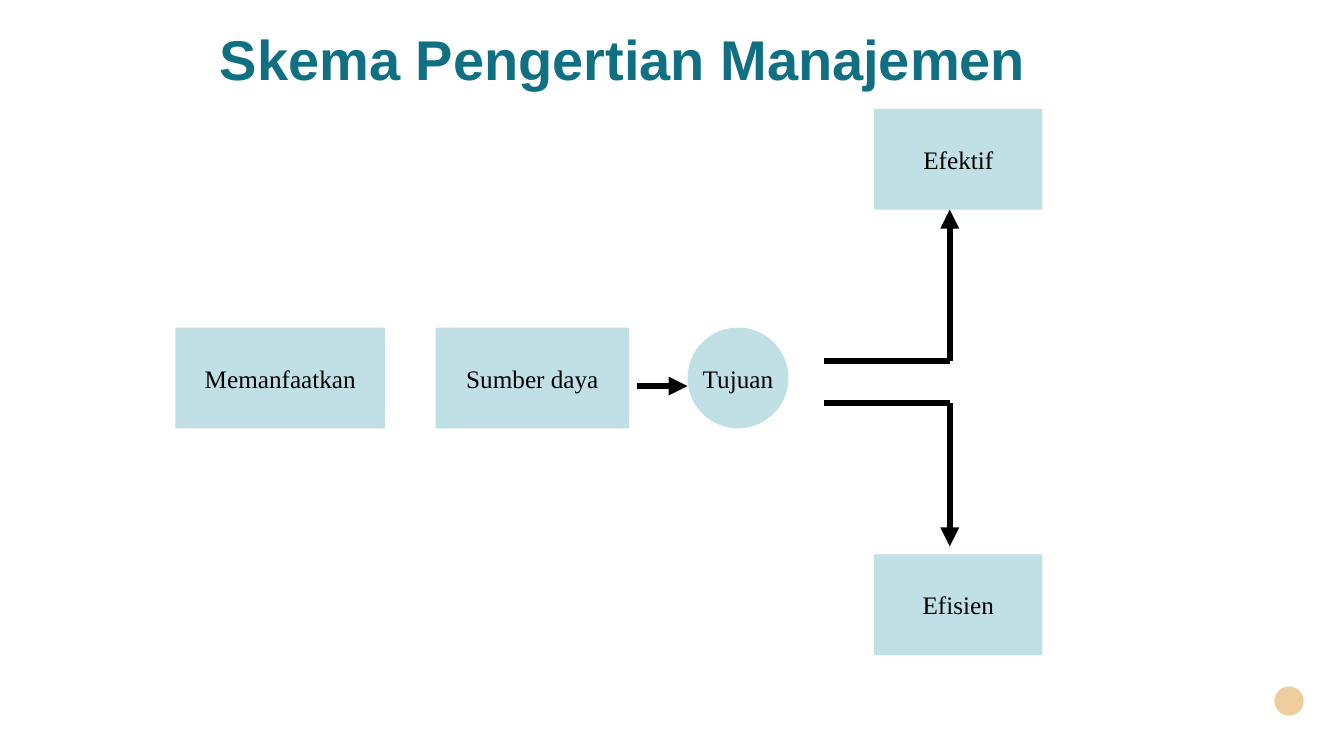
import pptx
import pptx.util
import pptx.dml.color
import pptx.enum.shapes
import pptx.enum.text
import pptx.oxml
import pptx.oxml.ns

Inches = pptx.util.Inches
RECTANGLE = pptx.enum.shapes.MSO_SHAPE.RECTANGLE
OVAL = pptx.enum.shapes.MSO_SHAPE.OVAL


def color(hex_string):
    return pptx.dml.color.RGBColor.from_string(hex_string)


def add_filled_shape(kind, left, top, width, height, fill):
    shape = slide.shapes.add_shape(
        kind, Inches(left), Inches(top), Inches(width), Inches(height))
    shape.shadow.inherit = False
    shape.fill.solid()
    shape.fill.fore_color.rgb = color(fill)
    shape.line.fill.background()
    return shape


presentation = pptx.Presentation()
presentation.slide_width = Inches(13.33)
presentation.slide_height = Inches(7.5)
slide = presentation.slides.add_slide(presentation.slide_layouts[5])

# Title
title = slide.shapes.title
title.left, title.top = Inches(2.08), Inches(0.27)
title.width, title.height = Inches(9.93), Inches(0.75)
title_frame = title.text_frame
title_frame.text = "Skema Pengertian Manajemen"
title_frame.auto_size = pptx.enum.text.MSO_AUTO_SIZE.NONE
title_frame.vertical_anchor = pptx.enum.text.MSO_ANCHOR.TOP
paragraph = title_frame.paragraphs[0]
paragraph.alignment = pptx.enum.text.PP_ALIGN.LEFT
paragraph.line_spacing = 0.9
paragraph.font.name = "Arial"
paragraph.font.size = pptx.util.Pt(40)
paragraph.font.bold = True
paragraph.font.color.rgb = color("107082")

# Corner dot
add_filled_shape(OVAL, 12.64, 6.81, 0.29, 0.29, "F0CDA1")

# Scheme nodes, all one inch high
nodes = [
    ("Memanfaatkan", RECTANGLE, 1.74, 3.25, 2.08),
    ("Sumber daya", RECTANGLE, 4.32, 3.25, 1.92),
    ("Efektif", RECTANGLE, 8.67, 1.08, 1.67),
    ("Efisien", RECTANGLE, 8.67, 5.5, 1.67),
    ("Tujuan", OVAL, 6.82, 3.25, 1),
]
for label, kind, left, top, width in nodes:
    node = add_filled_shape(kind, left, top, width, 1, "C1E0E6")
    node.text_frame.text = label
    node.text_frame.word_wrap = False
    node.text_frame.vertical_anchor = pptx.enum.text.MSO_ANCHOR.MIDDLE
    paragraph = node.text_frame.paragraphs[0]
    paragraph.alignment = pptx.enum.text.PP_ALIGN.CENTER
    paragraph.font.name = "Times New Roman"
    paragraph.font.size = pptx.util.Pt(18)
    paragraph.font.color.rgb = color("000000")

# Lines and arrows: start, end, arrowhead
lines = [
    ((6.32, 3.83), (6.82, 3.83), True),
    ((8.17, 4), (9.42, 4), False),
    ((8.17, 3.58), (9.42, 3.58), False),
    ((9.42, 4), (9.42, 5.42), True),
    ((9.42, 3.58), (9.42, 2.08), True),
]
for start, end, has_arrowhead in lines:
    connector = slide.shapes.add_connector(
        pptx.enum.shapes.MSO_CONNECTOR.STRAIGHT,
        *[Inches(value) for value in start + end])
    connector.line.color.rgb = color("000000")
    connector.line.width = pptx.util.Pt(4.5)
    if has_arrowhead:
        arrowhead = pptx.oxml.parse_xml(
            f'<a:tailEnd {pptx.oxml.ns.nsdecls("a")} type="triangle"/>')
        connector.line._get_or_add_ln().append(arrowhead)
    connector._element.spPr.append(
        pptx.oxml.parse_xml(f'<a:effectLst {pptx.oxml.ns.nsdecls("a")}/>'))

presentation.save("out.pptx")
